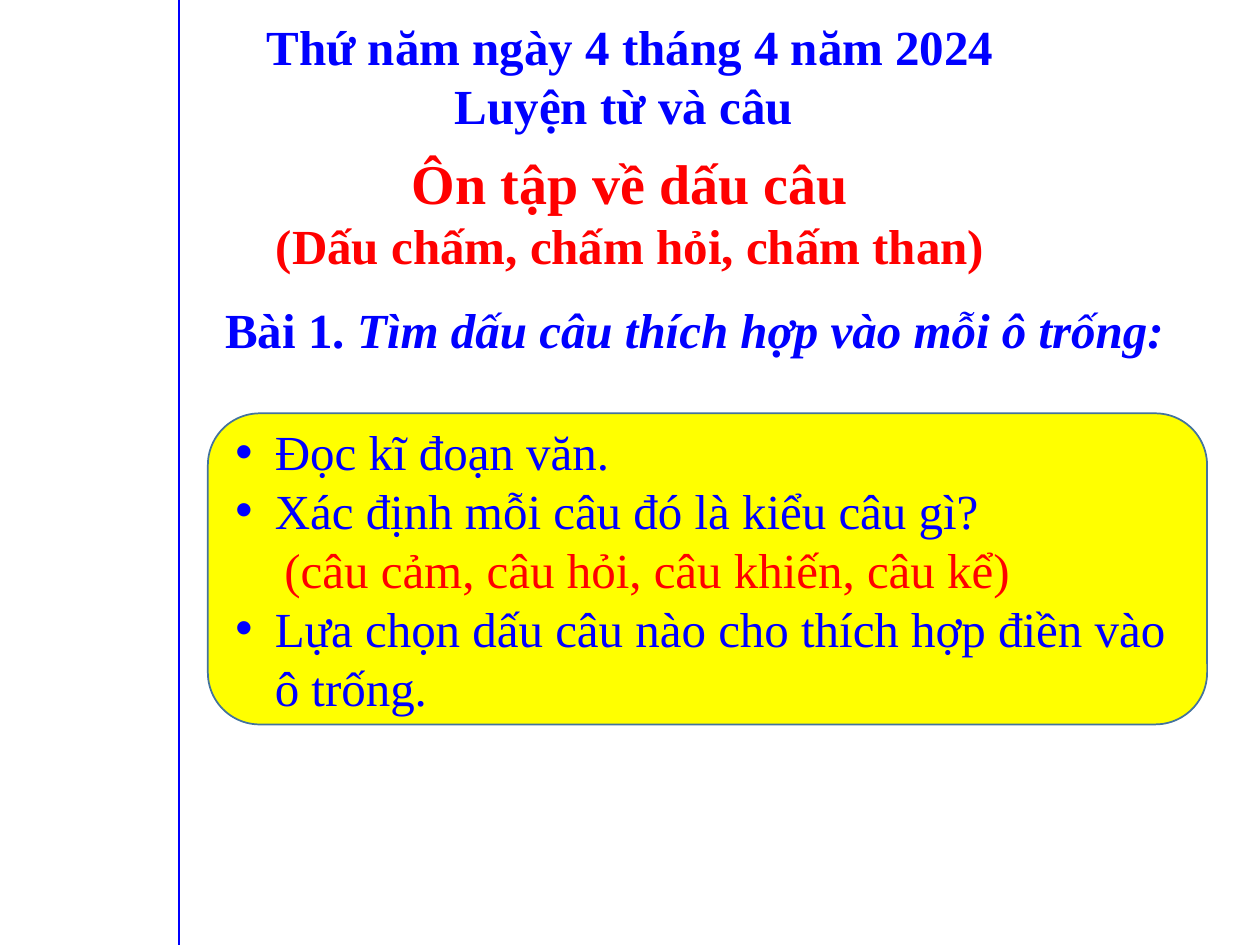
from lxml.etree import SubElement
from pptx import Presentation
from pptx.dml.color import RGBColor
from pptx.enum.shapes import MSO_CONNECTOR, MSO_SHAPE
from pptx.enum.text import MSO_ANCHOR, PP_ALIGN
from pptx.oxml.ns import qn
from pptx.util import Pt

FONT = "Times New Roman"
BLUE, RED, YELLOW, OUTLINE = "0000FF", "FF0000", "FFFF00", "43739E"
TEXT_LEFT = 121.7
HEADING_WIDTH = 476.6


def color(hex_value):
    return RGBColor.from_string(hex_value)


def style(paragraph, hex_value, size=28, bold=False, align=PP_ALIGN.LEFT):
    paragraph.alignment = align
    font = paragraph.font
    font.name, font.size, font.bold = FONT, Pt(size), bold
    font.color.rgb = color(hex_value)


def indent(paragraph, left, bullet=False):
    """Indent a paragraph, hanging its first line when it has a bullet."""
    properties = paragraph._p.get_or_add_pPr()
    properties.set("marL", str(Pt(left)))
    if bullet:
        properties.set("indent", str(-Pt(left)))
        SubElement(properties, qn("a:buFont"), typeface="Arial")
        SubElement(properties, qn("a:buChar"), char="•")


def add_text_box(slide, top, width, height):
    box = slide.shapes.add_textbox(Pt(TEXT_LEFT), Pt(top), Pt(width), Pt(height))
    box.text_frame.word_wrap = True
    return box.text_frame


def add_heading(slide, top, height, hex_value, lines):
    """Add centred bold lines, given as (text, size) pairs."""
    frame = add_text_box(slide, top, HEADING_WIDTH, height)
    frame.text = "\n".join(text for text, size in lines)
    for paragraph, (text, size) in zip(frame.paragraphs, lines):
        style(paragraph, hex_value, size, True, PP_ALIGN.CENTER)


def add_exercise(slide, label, task):
    paragraph = add_text_box(slide, 167.8, 558, 41).paragraphs[0]
    paragraph.add_run().text = label
    task_run = paragraph.add_run()
    task_run.text = task
    task_run.font.italic = True
    style(paragraph, BLUE, bold=True)


def add_margin_line(slide, left, height):
    line = slide.shapes.add_connector(
        MSO_CONNECTOR.STRAIGHT, Pt(left), Pt(0), Pt(left), Pt(height))
    line.line.color.rgb = color(BLUE)
    line.line.width = Pt(1)
    SubElement(line._element.spPr, qn("a:effectLst"))


def add_steps(slide, steps):
    """Add the rounded panel; steps are (text, is_bullet) pairs."""
    panel = slide.shapes.add_shape(
        MSO_SHAPE.ROUNDED_RECTANGLE, Pt(118.8), Pt(236.2), Pt(571), Pt(177.8))
    panel.shadow.inherit = False
    panel.fill.solid()
    panel.fill.fore_color.rgb = color(YELLOW)
    panel.line.color.rgb = color(OUTLINE)
    panel.line.width = Pt(1)
    frame = panel.text_frame
    frame.word_wrap = True
    frame.vertical_anchor = MSO_ANCHOR.MIDDLE
    frame.text = "\n".join(text for text, is_bullet in steps)
    for paragraph, (text, is_bullet) in zip(frame.paragraphs, steps):
        indent(paragraph, 22.5 if is_bullet else 28, is_bullet)
        style(paragraph, BLUE if is_bullet else RED)


def main():
    presentation = Presentation()
    presentation.slide_width, presentation.slide_height = Pt(720), Pt(540)
    slide = presentation.slides.add_slide(presentation.slide_layouts[6])
    add_heading(slide, 5.8, 75, BLUE, [
        ("Thứ năm ngày 4 tháng 4 năm 2024", 28),
        ("Luyện từ và câu ", 28),
    ])
    add_heading(slide, 81.4, 80, RED, [
        ("Ôn tập về dấu câu", 32),
        ("(Dấu chấm, chấm hỏi, chấm than)", 28),
    ])
    add_exercise(slide, "Bài 1. ", "Tìm dấu câu thích hợp vào mỗi ô trống:")
    add_margin_line(slide, 102.2, 540)
    add_steps(slide, [
        ("Đọc kĩ đoạn văn.", True),
        ("Xác định mỗi câu đó là kiểu câu gì?", True),
        ("(câu cảm, câu hỏi, câu khiến, câu kể)", False),
        ("Lựa chọn dấu câu nào cho thích hợp điền vào ô trống.", True),
    ])
    presentation.save("out.pptx")


if __name__ == "__main__":
    main()
